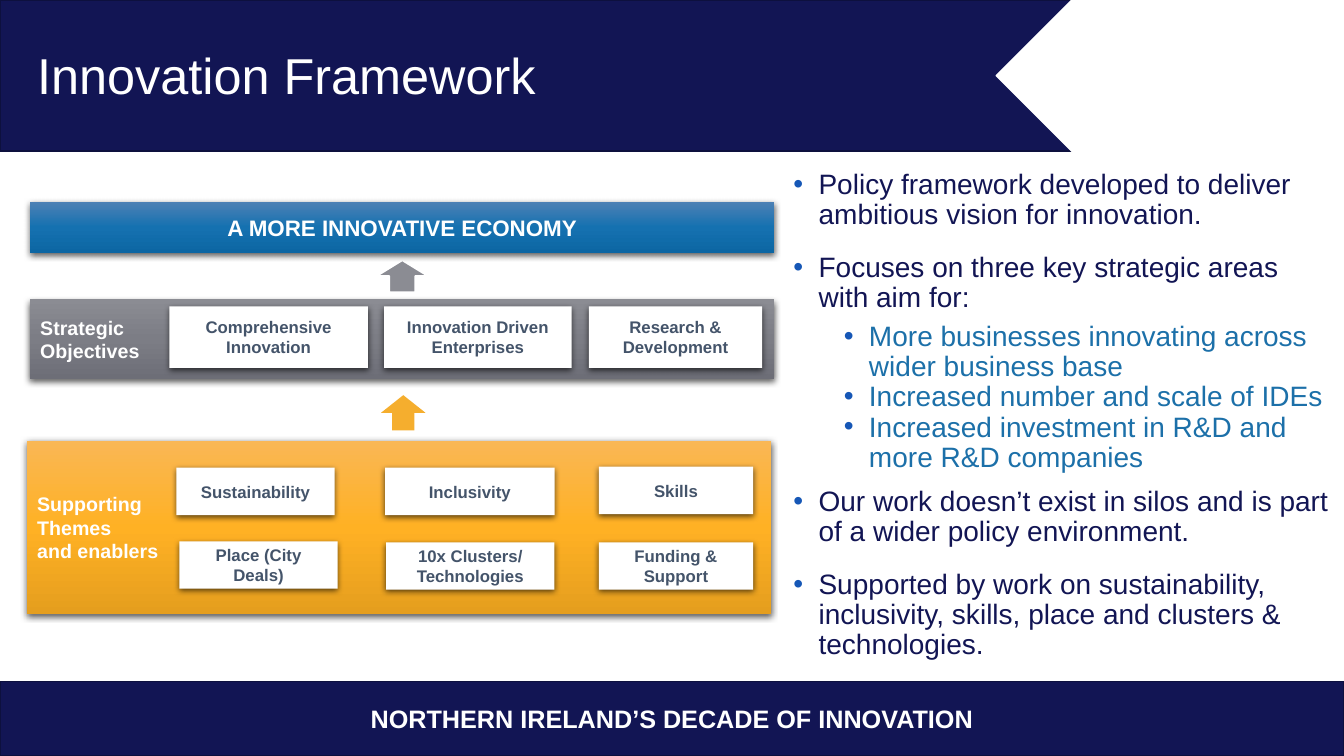
from copy import deepcopy

from lxml import etree
from pptx import Presentation
from pptx.dml.color import RGBColor
from pptx.enum.shapes import MSO_SHAPE as Shape
from pptx.enum.text import MSO_ANCHOR as Anchor, PP_ALIGN as Align
from pptx.oxml import parse_xml
from pptx.oxml.ns import nsdecls, qn
from pptx.util import Inches, Pt

COLOURS = {
    "navy": "121554", "navy_line": "0D103E", "white": "FFFFFF",
    "slate": "44546A", "grey": "8B8C93", "amber": "F5AE2E",
    "bullet": "1657B6", "sub_text": "1C70A9",
}
GRADIENTS = {
    "economy": ("4E81B5", "1571B0", "0C66A3"),
    "objectives": ("8B8C93", "7C7D85", "6D6E77"),
    "themes": ("F9B755", "FFB124", "E59E1E"),
}
# Each card: text, left and top within its panel, width
OBJECTIVES = [
    ("Comprehensive Innovation", 1.38, 0.07, 1.97),
    ("Innovation Driven Enterprises", 3.51, 0.07, 1.86),
    ("Research & Development", 5.54, 0.07, 1.72),
]
THEMES = [
    ("Sustainability", 1.48, 0.27, 1.57),
    ("Inclusivity", 3.55, 0.27, 1.68),
    ("Skills", 5.67, 0.26, 1.53),
    ("Place (City Deals)", 1.51, 1.0, 1.57),
    ("10x Clusters/ Technologies", 3.56, 1.01, 1.67),
    ("Funding & Support", 5.67, 1.01, 1.53),
]
# Each point: level, text
POINTS = [
    (0, "Policy framework developed to deliver ambitious vision for innovation."),
    (0, "Focuses on three key strategic areas with aim for:"),
    (1, "More businesses innovating across wider business base"),
    (1, "Increased number and scale of IDEs"),
    (1, "Increased investment in R&D and more R&D companies"),
    (0, "Our work doesn’t exist in silos and is part of a wider policy environment."),
    (0, "Supported by work on sustainability, inclusivity, skills, place and "
        "clusters & technologies."),
]


def rgb(name):
    return RGBColor.from_string(COLOURS[name])


def apply(target, **values):
    for key, value in values.items():
        setattr(target, key, value)


def set_font(para, size, colour, bold=False):
    apply(para.font, name="Arial", size=Pt(size), bold=bold)
    para.font.color.rgb = rgb(colour)


def add_shape(page, kind, box, fill=None, line=None, line_width=1):
    shape = page.shapes.add_shape(kind, *map(Inches, box))
    shape.shadow.inherit = False
    if fill:
        shape.fill.solid()
        shape.fill.fore_color.rgb = rgb(fill)
    if line:
        shape.line.color.rgb = rgb(line)
        shape.line.width = Pt(line_width)
    else:
        shape.line.fill.background()
    return shape


def write(shape, lines, size, colour, align=Align.LEFT, bold=True):
    frame = shape.text_frame
    apply(frame, word_wrap=True, vertical_anchor=Anchor.MIDDLE)
    frame.text = "\n".join(lines)
    for para in frame.paragraphs:
        para.alignment = align
        set_font(para, size, colour, bold)


def cast_shadow(shape):
    effects = shape.element.spPr.find(qn("a:effectLst"))
    effects.append(parse_xml(
        f'<a:outerShdw {nsdecls("a")} blurRad="{Pt(4.5)}" dist="{Pt(1.5)}" '
        'dir="5400000" algn="ctr" rotWithShape="0"><a:srgbClr val="000000">'
        '<a:alpha val="63000"/></a:srgbClr></a:outerShdw>'))


def add_panel(page, box, gradient):
    panel = add_shape(page, Shape.RECTANGLE, box)
    panel.fill.gradient()
    panel.fill.gradient_angle = 270
    stops = panel.element.spPr.find(qn("a:gradFill")).find(qn("a:gsLst"))
    stops.append(deepcopy(stops[0]))
    for index, (stop, colour) in enumerate(
            zip(panel.fill.gradient_stops, GRADIENTS[gradient])):
        stop.position = index / 2
        stop.color.rgb = RGBColor.from_string(colour)
    cast_shadow(panel)
    return panel


def add_card_panel(page, box, gradient, label, cards, card_height):
    write(add_panel(page, box, gradient), label, 14, "white")
    for text, left, top, width in cards:
        place = (box[0] + left, box[1] + top, width, card_height)
        card = add_shape(page, Shape.RECTANGLE, place, "white")
        cast_shadow(card)
        write(card, [text], 12, "slate", Align.CENTER)


def add_header(page, box):
    left, top, width, height = box
    add_shape(page, Shape.RECTANGLE, box, "navy", "navy_line")
    notch = add_shape(page, Shape.PENTAGON,
                      (left + width - 3.45, top, 3.45, height), "white", "white")
    notch.rotation = 180
    title = page.shapes.add_textbox(
        *map(Inches, (left + 0.27, top + 0.22, 8.79, 1.11)))
    write(title, ["Innovation Framework"], 36, "white", bold=False)
    title.text_frame.paragraphs[0].line_spacing = 0.9


def add_footer(page, box):
    band = add_shape(page, Shape.RECTANGLE, box, "navy", "navy_line")
    write(band, ["NORTHERN IRELAND’S DECADE OF INNOVATION"], 18, "white", Align.CENTER)


def add_framework(page, box):
    left, top, width, height = box
    # Arrows between the layers
    add_shape(page, Shape.UP_ARROW, (left + 3.46, top + 0.58, 0.52, 0.32),
              "grey", "white", 1.5)
    add_shape(page, Shape.UP_ARROW, (left + 3.51, top + 1.92, 0.44, 0.35), "amber")
    # Layers from goal to foundations
    panel_width = width - 0.03
    goal = add_panel(page, (left + 0.03, top, panel_width, 0.51), "economy")
    write(goal, ["A MORE INNOVATIVE ECONOMY"], 16, "white", Align.CENTER)
    add_card_panel(page, (left + 0.03, top + 0.97, panel_width, 0.79), "objectives",
                   ["Strategic", "Objectives"], OBJECTIVES, 0.61)
    add_card_panel(page, (left, top + height - 1.72, panel_width, 1.72), "themes",
                   ["Supporting", "Themes", "and enablers"], THEMES, 0.47)


def add_bullet(para, indent):
    props = para._p.get_or_add_pPr()
    props.set("marL", str(Inches(indent)))
    props.set("indent", str(Inches(-0.25)))
    colour = etree.SubElement(props, qn("a:buClr"))
    etree.SubElement(colour, qn("a:srgbClr"), val=COLOURS["bullet"])
    etree.SubElement(props, qn("a:buFont"), typeface="Arial")
    etree.SubElement(props, qn("a:buChar"), char="•")


def add_points(page, box):
    frame = page.shapes.add_textbox(*map(Inches, box)).text_frame
    frame.word_wrap = True
    for index, (level, text) in enumerate(POINTS):
        para = frame.add_paragraph() if index else frame.paragraphs[0]
        para.text = text
        add_bullet(para, 0.75 if level else 0.25)
        apply(para, level=level, line_spacing=0.9,
              space_before=Pt(10 if index and not level else 0),
              space_after=Pt(0 if level else 6))
        set_font(para, 20, "sub_text" if level else "navy")


def main():
    deck = Presentation()
    apply(deck, slide_width=Inches(13.33), slide_height=Inches(7.5))
    page = deck.slides.add_slide(deck.slide_layouts[6])
    add_header(page, (0, 0, 13.33, 1.5))
    add_footer(page, (0, 6.76, 13.33, 0.74))
    add_framework(page, (0.27, 2, 7.41, 4.09))
    add_points(page, (7.77, 1.64, 5.52, 5.31))
    deck.save("out.pptx")


if __name__ == "__main__":
    main()
